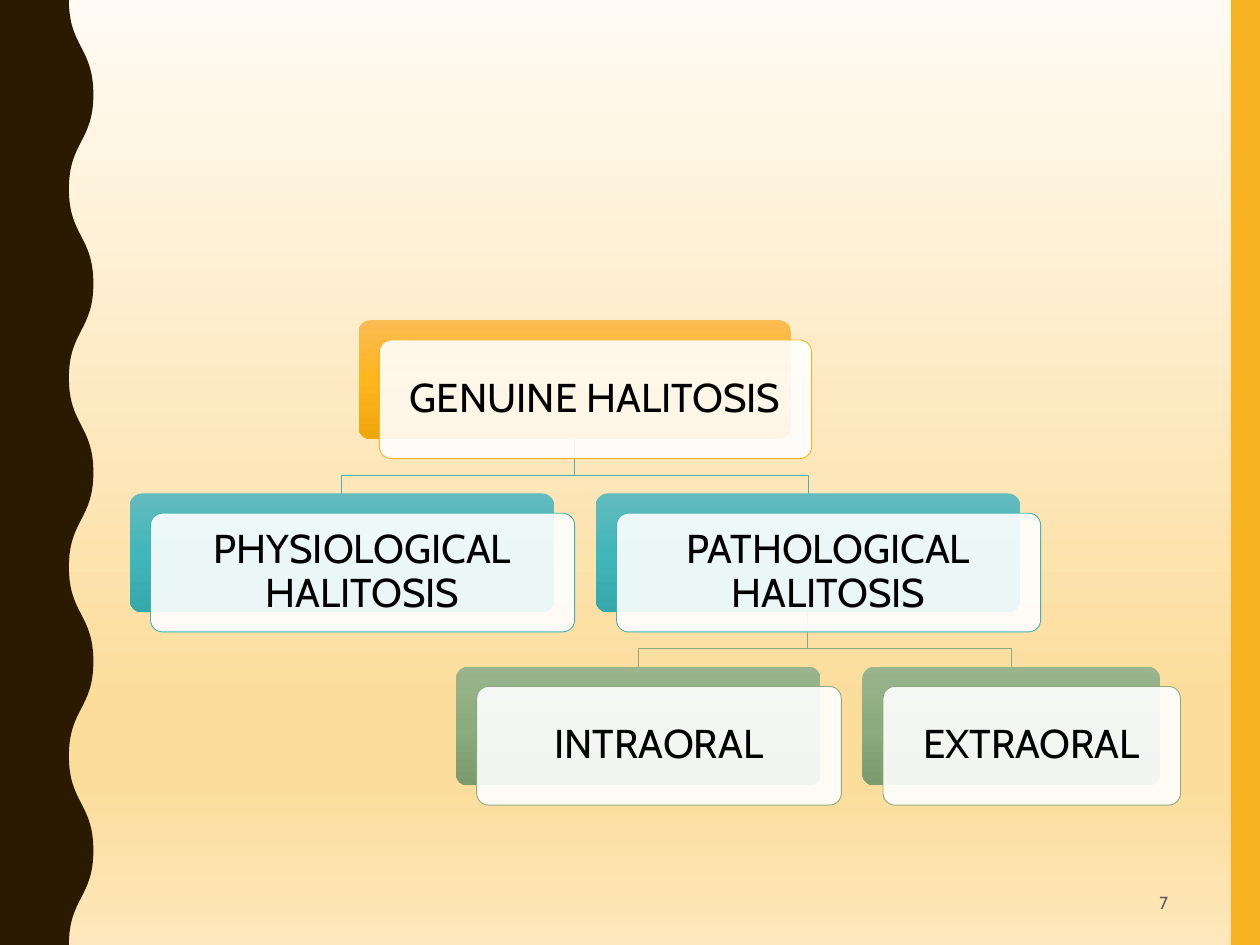
"""Build the slide that classifies genuine halitosis as a tree of cards."""
from dataclasses import dataclass

from lxml import etree
from pptx import Presentation
from pptx.dml.color import RGBColor
from pptx.enum.shapes import MSO_SHAPE
from pptx.enum.text import MSO_ANCHOR, PP_ALIGN
from pptx.oxml.ns import qn
from pptx.util import Pt

RECTANGLE, ROUNDED = MSO_SHAPE.RECTANGLE, MSO_SHAPE.ROUNDED_RECTANGLE
MIDDLE = MSO_ANCHOR.MIDDLE
CENTER, RIGHT = PP_ALIGN.CENTER, PP_ALIGN.RIGHT

FONT = "Cabin"
BLACK = RGBColor(0x00, 0x00, 0x00)
WHITE = RGBColor(0xFF, 0xFF, 0xFF)
GRAY = RGBColor(0x59, 0x59, 0x59)
BROWN = RGBColor(0x2A, 0x1A, 0x00)
GOLD = RGBColor(0xF8, 0xB3, 0x23)
TEAL = RGBColor(0x46, 0xB2, 0xB5)
GREEN = RGBColor(0x8C, 0xAA, 0x7E)
SAND = RGBColor(0xFC, 0xDD, 0x9C)
BACKDROP = [(0, RGBColor(0xFF, 0xFB, 0xF4)), (74, SAND), (83, SAND),
            (100, RGBColor(0xFD, 0xE8, 0xBD))]
SHADES = {
    GOLD: [(0, RGBColor(0xFB, 0xBC, 0x54)), (50, RGBColor(0xFF, 0xB5, 0x1C)),
           (100, RGBColor(0xEF, 0xA6, 0x0C))],
    TEAL: [(0, RGBColor(0x64, 0xBB, 0xBE)), (50, RGBColor(0x40, 0xB7, 0xBB)),
           (100, RGBColor(0x34, 0xA8, 0xAB))],
    GREEN: [(0, RGBColor(0x9A, 0xB4, 0x8E)), (50, RGBColor(0x8B, 0xAC, 0x7C)),
            (100, RGBColor(0x7B, 0x9B, 0x6C))],
}

SLIDE_WIDTH, SLIDE_HEIGHT = 720, 540
CARD_HEIGHT = 67.8
SHIFT_RIGHT, SHIFT_DOWN = 11.8, 11.3
TREE_TOP, LEVEL_STEP = 183, 99
BEND_ABOVE_CHILD = 10.3
LEVEL_COLORS = [GOLD, TEAL, GREEN]


@dataclass
class Card:
    """One category of the tree."""
    label: str
    level: int
    left: float
    width: float
    parent: "Card | None" = None

    @property
    def top(self):
        """Return the top edge of the category's level."""
        return TREE_TOP + self.level * LEVEL_STEP

    @property
    def center(self):
        """Return the horizontal middle of the rear panel."""
        return self.left + self.width / 2

    @property
    def color(self):
        """Return the accent colour of the category's level."""
        return LEVEL_COLORS[self.level]


def apply_gradient(fill, owner, stops):
    """Fill with a top-down gradient of (percent, colour) stops."""
    fill.gradient()
    fill.gradient_angle = 270
    stop_list = next(owner.iter(qn("a:gsLst")))
    for stop in list(stop_list):
        stop_list.remove(stop)
    for percent, color in stops:
        stop = etree.SubElement(stop_list, qn("a:gs"), pos=str(percent * 1000))
        etree.SubElement(stop, qn("a:srgbClr"), val=str(color))


def add_panel(slide, kind, left, top, width, height):
    """Add a preset shape without shadow or outline."""
    panel = slide.shapes.add_shape(kind, Pt(left), Pt(top), Pt(width), Pt(height))
    panel.shadow.inherit = False
    panel.line.fill.background()
    return panel


def add_outline(slide, points, close):
    """Add a freeform through the points."""
    builder = slide.shapes.build_freeform(*map(Pt, points[0]), scale=1.0)
    builder.add_line_segments([(Pt(x), Pt(y)) for x, y in points[1:]], close=close)
    outline = builder.convert_to_shape()
    outline.shadow.inherit = False
    return outline


def write_text(frame, text, size, color, alignment):
    """Write one vertically centred paragraph."""
    frame.word_wrap = True
    frame.vertical_anchor = MIDDLE
    frame.text = text
    paragraph = frame.paragraphs[0]
    paragraph.alignment = alignment
    font = paragraph.runs[0].font
    font.name, font.size = FONT, Pt(size)
    font.color.rgb = color


def add_wavy_edge(slide, trough=39.4, crest=53.4, half_wave=54):
    """Add the dark band whose right side swings between trough and crest."""
    turns = [(crest if index % 2 else trough, index * half_wave)
             for index in range(SLIDE_HEIGHT // half_wave + 1)]
    band = add_outline(slide, [(0, SLIDE_HEIGHT), (0, 0)] + turns, close=True)
    band.fill.solid()
    band.fill.fore_color.rgb = BROWN
    band.line.fill.background()
    swings = list(band.element.iter(qn("a:lnTo")))[2:len(turns) + 1]
    for swing, (start_x, start_y), (end_x, end_y) in zip(swings, turns, turns[1:]):
        middle = (start_y + end_y) / 2
        swing.tag = qn("a:cubicBezTo")
        swing.clear()
        for x, y in ((start_x, middle), (end_x, middle), (end_x, end_y)):
            etree.SubElement(swing, qn("a:pt"), x=str(Pt(x)), y=str(Pt(y)))


def add_branch(slide, card):
    """Add the elbow line from a category's parent down to it."""
    parent = card.parent
    bend = card.top - BEND_ABOVE_CHILD
    branch = add_outline(slide, [
        (parent.center, parent.top + CARD_HEIGHT), (parent.center, bend),
        (card.center, bend), (card.center, card.top)], close=False)
    branch.fill.background()
    branch.line.color.rgb = card.color
    branch.line.width = Pt(0.5)


def add_card(slide, card):
    """Add a coloured rear panel and the labelled translucent one before it."""
    rear, front = [
        add_panel(slide, ROUNDED, card.left + right, card.top + down,
                  card.width, CARD_HEIGHT)
        for right, down in ((0, 0), (SHIFT_RIGHT, SHIFT_DOWN))]
    for panel in (rear, front):
        panel.adjustments[0] = 0.1
    apply_gradient(rear.fill, rear.element, SHADES[card.color])
    front.fill.solid()
    front.fill.fore_color.rgb = WHITE
    white = next(front.element.spPr.iter(qn("a:srgbClr")))
    etree.SubElement(white, qn("a:alpha"), val="90000")
    front.line.color.rgb = card.color
    front.line.width = Pt(0.5)
    frame = front.text_frame
    write_text(frame, card.label, 23, BLACK, CENTER)
    frame.margin_left = frame.margin_right = Pt(5.2)
    frame.margin_top = frame.margin_bottom = Pt(5.2)
    frame.paragraphs[0].line_spacing = 0.9


def add_page_number(slide, number):
    """Add the page number at the lower right."""
    box = slide.shapes.add_textbox(Pt(508.3), Pt(501.8), Pt(166.3), Pt(27.4))
    write_text(box.text_frame, number, 10, GRAY, RIGHT)


def main():
    """Build and save the slide."""
    presentation = Presentation()
    presentation.slide_width = Pt(SLIDE_WIDTH)
    presentation.slide_height = Pt(SLIDE_HEIGHT)
    slide = presentation.slides.add_slide(presentation.slide_layouts[6])
    apply_gradient(slide.background.fill, slide.element, BACKDROP)

    side_bar = add_panel(slide, RECTANGLE, 703.4, 0, 16.6, SLIDE_HEIGHT)
    side_bar.fill.solid()
    side_bar.fill.fore_color.rgb = GOLD
    add_wavy_edge(slide)

    genuine = Card("GENUINE HALITOSIS", 0, 205, 247)
    physiological = Card("PHYSIOLOGICAL HALITOSIS", 1, 74.2, 242.4, genuine)
    pathological = Card("PATHOLOGICAL HALITOSIS", 1, 340.5, 242.4, genuine)
    intraoral = Card("INTRAORAL", 2, 260.6, 208.4, pathological)
    extraoral = Card("EXTRAORAL", 2, 492.8, 170, pathological)
    for child in (extraoral, intraoral, pathological, physiological):
        add_branch(slide, child)
    for card in (genuine, physiological, pathological, intraoral, extraoral):
        add_card(slide, card)
    add_page_number(slide, "7")
    presentation.save("out.pptx")


if __name__ == "__main__":
    main()
